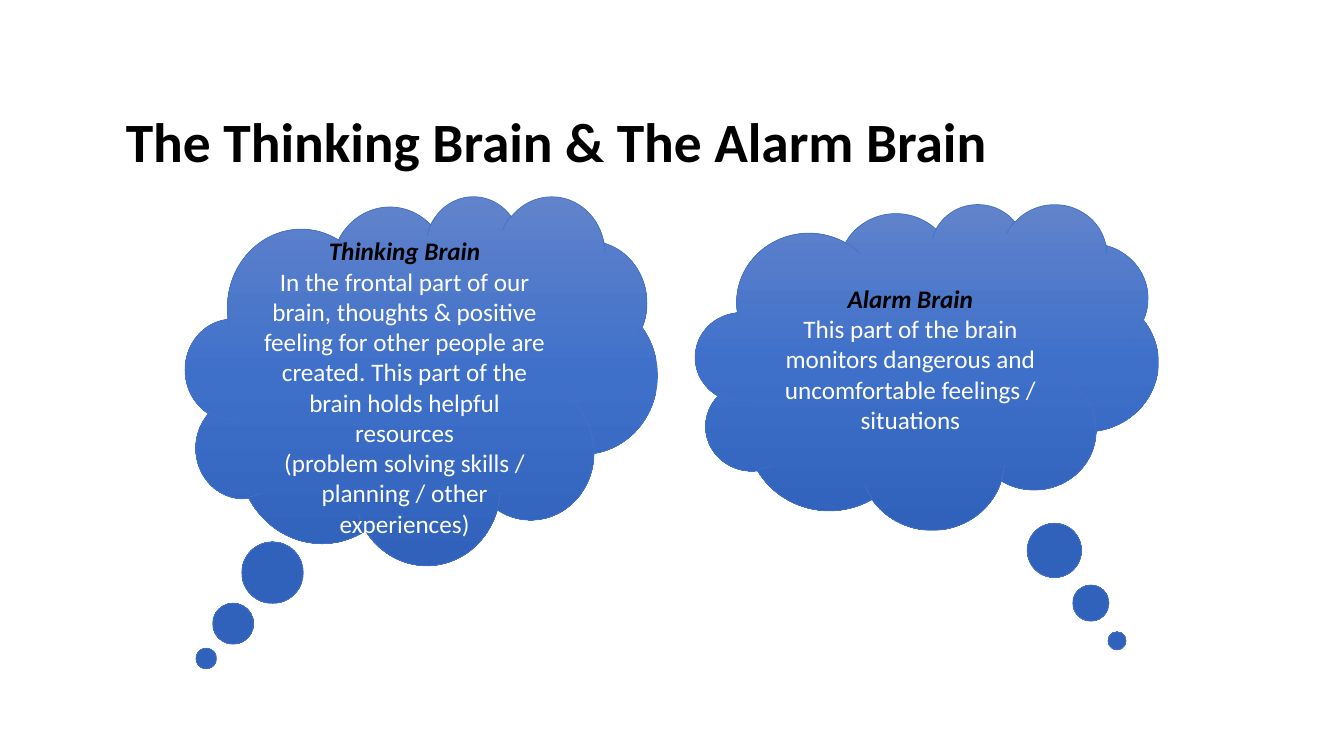
from copy import deepcopy
from dataclasses import dataclass

from pptx import Presentation
from pptx import util as u
from pptx.dml import color
from pptx.enum import shapes, text
from pptx.oxml import ns


@dataclass(frozen=True)
class Theme:
    font: str = "Calibri"
    title_size: float = 39.6
    body_size: float = 18
    dark: str = "000000"
    light: str = "FFFFFF"
    outline: str = "4472C4"
    gradient: tuple[str, ...] = ("6183CB", "3E70CA", "3062BB")


@dataclass(frozen=True)
class Box:
    left: float
    top: float
    width: float
    height: float

    def lengths(self) -> list[u.Length]:
        return [u.Pt(side) for side in (self.left, self.top, self.width, self.height)]


@dataclass(frozen=True)
class Cloud:
    box: Box
    tail: tuple[float, float]
    heading: str
    body: tuple[str, ...]
    top_inset: float = 3.6


THEME = Theme()
TITLE = "The Thinking Brain & The Alarm Brain"
TITLE_BOX = Box(82.8, 58.3, 648, 90)
CLOUDS = (
    Cloud(
        Box(132.5, 139.7, 337, 263.5),
        (-0.456, 0.755),
        "Thinking Brain",
        (
            "In the frontal part of our brain, thoughts & positive feeling for other "
            "people are created. This part of the brain holds helpful resources",
            "(problem solving skills / planning / other experiences)",
        ),
        top_inset=25.6,
    ),
    Cloud(
        Box(496.8, 145.4, 330.5, 232.6),
        (0.411, 0.843),
        "Alarm Brain",
        (
            "This part of the brain monitors dangerous and uncomfortable "
            "feelings / situations",
        ),
    ),
)


def format_paragraph(paragraph, size: float, rgb: str, bold: bool, italic: bool) -> None:
    for run in paragraph.runs:
        run.font.name = THEME.font
        run.font.size = u.Pt(size)
        run.font.bold = bold
        run.font.italic = italic
        run.font.color.rgb = color.RGBColor.from_string(rgb)


def fill_gradient(shape, colors: tuple[str, ...]) -> None:
    shape.fill.gradient()
    shape.fill.gradient_angle = 270
    stop_list = shape.element.spPr.find(".//" + ns.qn("a:gsLst"))
    while len(stop_list) < len(colors):
        stop_list.append(deepcopy(stop_list[0]))
    for index, (stop, rgb) in enumerate(zip(shape.fill.gradient_stops, colors)):
        stop.position = index / (len(colors) - 1)
        stop.color.rgb = color.RGBColor.from_string(rgb)


def draw_title(slide) -> None:
    shape = slide.shapes.add_textbox(*TITLE_BOX.lengths())
    text_frame = shape.text_frame
    text_frame.word_wrap = True
    text_frame.vertical_anchor = text.MSO_ANCHOR.MIDDLE
    text_frame.text = TITLE
    paragraph = text_frame.paragraphs[0]
    paragraph.line_spacing = 0.9
    format_paragraph(paragraph, THEME.title_size, THEME.dark, bold=True, italic=False)


def draw_cloud(slide, cloud: Cloud) -> None:
    shape = slide.shapes.add_shape(
        shapes.MSO_SHAPE.CLOUD_CALLOUT, *cloud.box.lengths()
    )
    shape.shadow.inherit = False
    for index, offset in enumerate(cloud.tail):
        shape.adjustments[index] = offset
    fill_gradient(shape, THEME.gradient)
    shape.line.color.rgb = color.RGBColor.from_string(THEME.outline)
    shape.line.width = u.Pt(0.5)

    text_frame = shape.text_frame
    text_frame.word_wrap = True
    text_frame.vertical_anchor = text.MSO_ANCHOR.MIDDLE
    text_frame.margin_top = u.Pt(cloud.top_inset)
    text_frame.text = "\n".join((cloud.heading, *cloud.body))
    for index, paragraph in enumerate(text_frame.paragraphs):
        is_heading = index == 0
        paragraph.alignment = text.PP_ALIGN.CENTER
        rgb = THEME.dark if is_heading else THEME.light
        format_paragraph(paragraph, THEME.body_size, rgb, is_heading, is_heading)


def main() -> None:
    presentation = Presentation()
    presentation.slide_width = u.Pt(960)
    presentation.slide_height = u.Pt(540)
    slide = presentation.slides.add_slide(presentation.slide_layouts[6])
    draw_title(slide)
    for cloud in CLOUDS:
        draw_cloud(slide, cloud)
    presentation.save("out.pptx")


if __name__ == "__main__":
    main()
